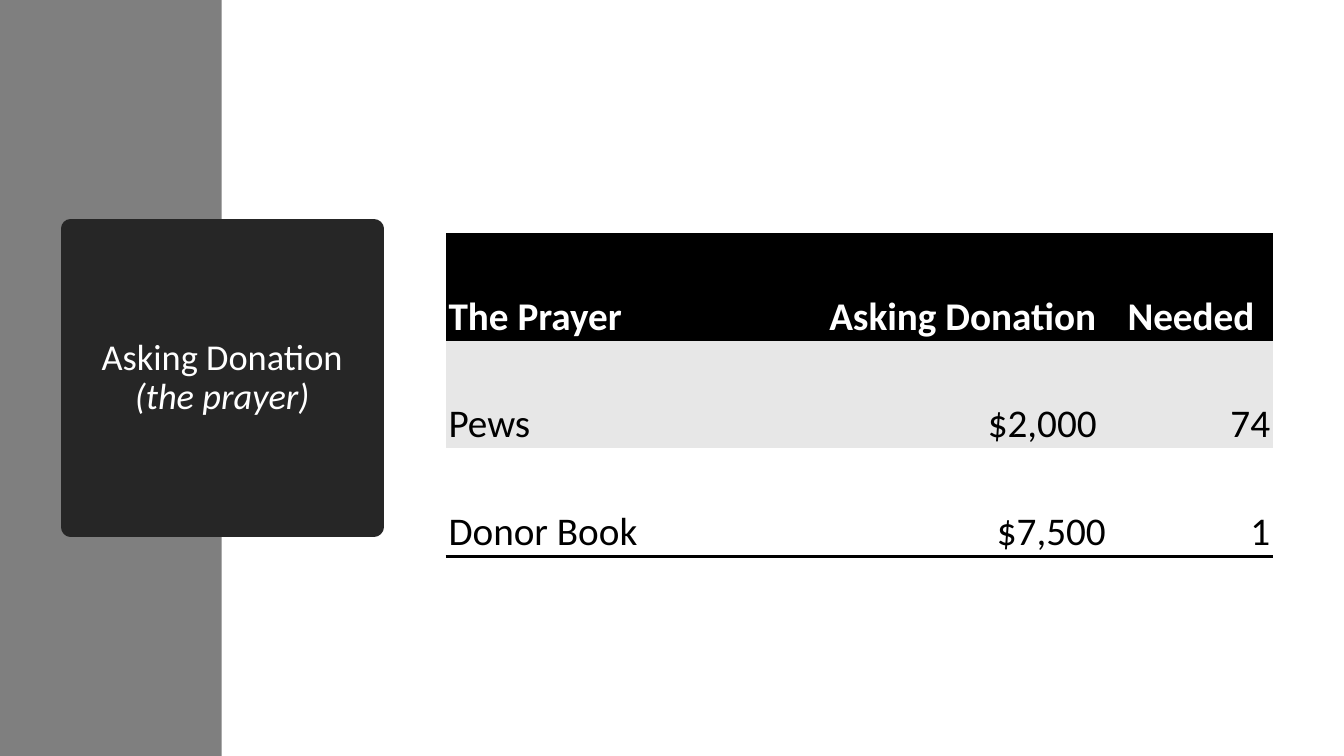
import dataclasses

import lxml.etree
import pptx
import pptx.dml.color
import pptx.enum.shapes
import pptx.enum.text
import pptx.oxml.ns
import pptx.util

ALIGN = pptx.enum.text.PP_ALIGN
ANCHOR = pptx.enum.text.MSO_ANCHOR
RECTANGLE = pptx.enum.shapes.MSO_SHAPE.RECTANGLE


@dataclasses.dataclass(frozen=True)
class Theme:
    font: str = "Calibri"
    title_size: float = 26
    table_size: float = 28
    title_line: float = 13.75
    rule: float = 2
    black: str = "000000"
    white: str = "FFFFFF"
    side: str = "7F7F7F"
    card: str = "262626"
    band: str = "E7E7E7"


@dataclasses.dataclass(frozen=True)
class Area:
    """A place on the page, in grid columns and rows."""
    left: float
    top: float
    width: float
    height: float


@dataclasses.dataclass(frozen=True)
class DonationRow:
    texts: tuple[str, str, str]
    aligns: tuple
    fill: str
    color: str
    bold: bool = False
    ruled: bool = False
    amount_inset: float = 0.3


THEME = Theme()

# Page grid: ten columns or rows to the inch
COLUMNS, ROWS = 133.33, 75
SIDE_BAND = Area(0, 0, 22, ROWS)
TITLE_CARD = Area(7, 22.7, 30.1, 29.6)
TABLE_COLUMNS = (36.8, 29, 16.3)
TABLE_ROW = 10.7
CELL_INSET = 0.3

# Donation table
HEADER_ALIGNS = (ALIGN.LEFT, ALIGN.CENTER, ALIGN.CENTER)
VALUE_ALIGNS = (ALIGN.LEFT, ALIGN.RIGHT, ALIGN.RIGHT)
DONATIONS = (
    DonationRow(("The Prayer", "Asking Donation", "Needed"), HEADER_ALIGNS,
                THEME.black, THEME.white, bold=True),
    DonationRow(("Pews", "$2,000", "74"), VALUE_ALIGNS,
                THEME.band, THEME.black, amount_inset=1.2),
    DonationRow(("Donor Book", "$7,500", "1"), VALUE_ALIGNS,
                THEME.white, THEME.black, ruled=True),
)
TABLE = Area(44.2, 23.1, sum(TABLE_COLUMNS), TABLE_ROW * len(DONATIONS))


def grid(units: float) -> pptx.util.Length:
    return pptx.util.Inches(units / 10)


def place(area: Area) -> tuple:
    return tuple(grid(units) for units in dataclasses.astuple(area))


def rgb(color: str) -> pptx.dml.color.RGBColor:
    return pptx.dml.color.RGBColor.from_string(color)


def style_span(span, size: float, color: str, bold: bool = False) -> None:
    span.font.name = THEME.font
    span.font.size = pptx.util.Pt(size)
    span.font.color.rgb = rgb(color)
    span.font.bold = bold


def add_block(page, area: Area, color: str):
    block = page.shapes.add_shape(RECTANGLE, *place(area))
    block.shadow.inherit = False
    block.fill.solid()
    block.fill.fore_color.rgb = rgb(color)
    block.line.fill.background()
    return block


def add_title_card(page) -> None:
    card = add_block(page, TITLE_CARD, THEME.card)
    # A thick outline with round joins softens the corners
    card.line.color.rgb = rgb(THEME.card)
    card.line.width = pptx.util.Pt(THEME.title_line)
    outline = card.line._get_or_add_ln()
    lxml.etree.SubElement(outline, pptx.oxml.ns.qn("a:round"))
    frame = card.text_frame
    frame.word_wrap = True
    frame.vertical_anchor = ANCHOR.MIDDLE
    para = frame.paragraphs[0]
    para.text = "Asking Donation\v(the prayer)"
    para.alignment = ALIGN.CENTER
    para.line_spacing = 0.9
    for span in para.runs:
        style_span(span, THEME.title_size, THEME.white)
    para.runs[-1].font.italic = True


def set_borders(cell, ruled: bool) -> None:
    """Clear all cell borders, leaving a bottom rule where asked."""
    qn = pptx.oxml.ns.qn
    properties = cell._tc.get_or_add_tcPr()
    for index, side in enumerate(("lnL", "lnR", "lnT", "lnB")):
        border = lxml.etree.Element(qn(f"a:{side}"))
        if ruled and side == "lnB":
            border.set("w", str(pptx.util.Pt(THEME.rule)))
            fill = lxml.etree.SubElement(border, qn("a:solidFill"))
            lxml.etree.SubElement(fill, qn("a:srgbClr"), val=THEME.black)
        else:
            lxml.etree.SubElement(border, qn("a:noFill"))
        properties.insert(index, border)


def fill_cell(cell, row: DonationRow, column: int) -> None:
    cell.fill.solid()
    cell.fill.fore_color.rgb = rgb(row.fill)
    set_borders(cell, row.ruled)
    cell.vertical_anchor = ANCHOR.BOTTOM
    cell.margin_left = cell.margin_top = grid(CELL_INSET)
    cell.margin_right = grid(row.amount_inset if column == 1 else CELL_INSET)
    cell.margin_bottom = 0
    cell.text_frame.text = row.texts[column]
    para = cell.text_frame.paragraphs[0]
    para.alignment = row.aligns[column]
    style_span(para.runs[0], THEME.table_size, row.color, row.bold)


def add_donation_table(page) -> None:
    table = page.shapes.add_table(
        len(DONATIONS), len(TABLE_COLUMNS), *place(TABLE)).table
    table.horz_banding = False
    table.first_row = False
    for column, width in enumerate(TABLE_COLUMNS):
        table.columns[column].width = grid(width)
    for index, row in enumerate(DONATIONS):
        table.rows[index].height = grid(TABLE_ROW)
        for column in range(len(TABLE_COLUMNS)):
            fill_cell(table.cell(index, column), row, column)


def main() -> None:
    deck = pptx.Presentation()
    deck.slide_width, deck.slide_height = grid(COLUMNS), grid(ROWS)
    page = deck.slides.add_slide(deck.slide_layouts[6])
    # Background and side band
    add_block(page, Area(0, 0, COLUMNS, ROWS), THEME.white)
    add_block(page, SIDE_BAND, THEME.side)
    # Title and table
    add_title_card(page)
    add_donation_table(page)
    deck.save("out.pptx")


if __name__ == "__main__":
    main()
